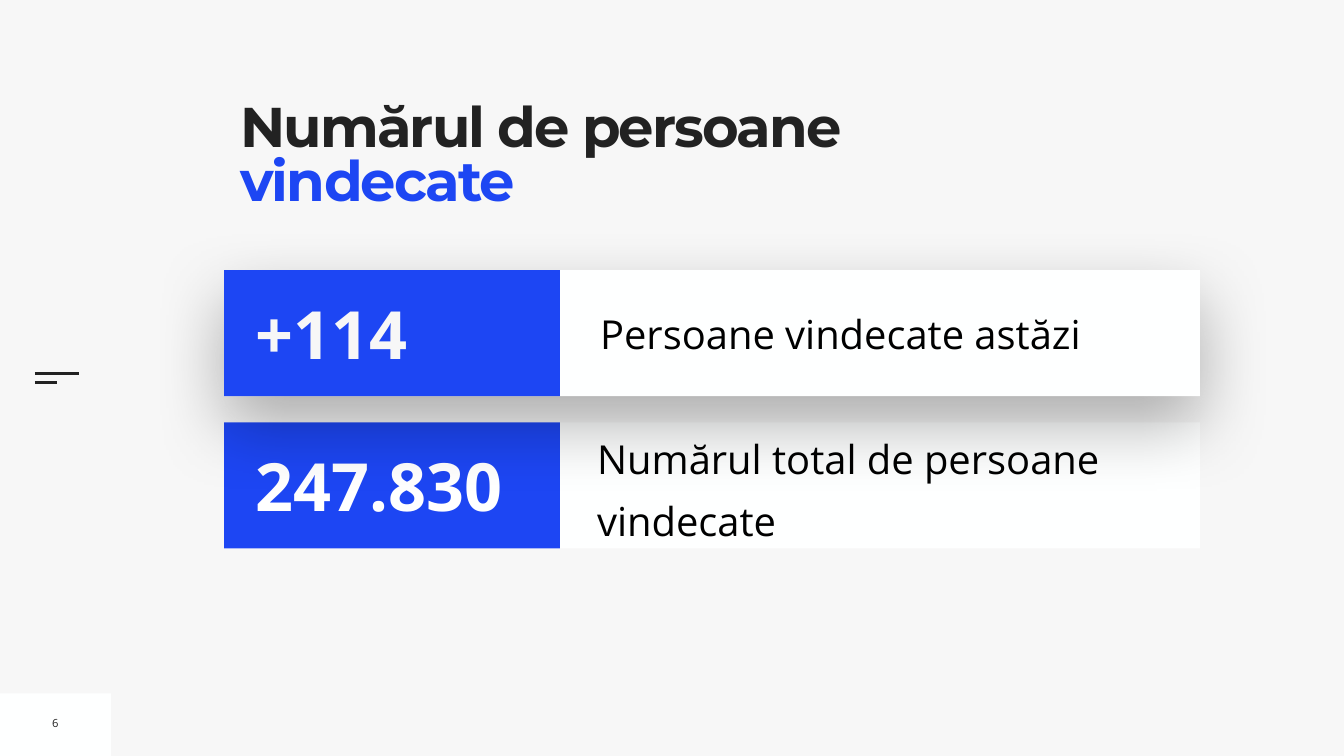
from lxml import etree
from pptx import Presentation, util as u
from pptx.dml.color import RGBColor
from pptx.enum import shapes, text
from pptx.oxml import ns

PAPER = RGBColor(0xF7, 0xF7, 0xF7)
WHITE = RGBColor(0xFE, 0xFF, 0xFF)
BRIGHT = RGBColor(0xFF, 0xFF, 0xFF)
BLUE = RGBColor(0x1D, 0x46, 0xF3)
DARK = RGBColor(0x22, 0x22, 0x22)
BLACK = RGBColor(0, 0, 0)


def style(item, values):
    """Set every named attribute on an item."""
    for name, value in values.items():
        setattr(item, name, value)


def add_run(para, words, color, **font):
    """Add a coloured run to a paragraph."""
    run = para.add_run()
    run.text = words
    style(run.font, font)
    run.font.color.rgb = color
    return run


def add_rect(parent, box, color):
    """Add a plain rectangle without outline or shadow."""
    rect = parent.add_shape(shapes.MSO_SHAPE.RECTANGLE, *map(u.Inches, box))
    rect.shadow.inherit = False
    rect.fill.solid()
    rect.fill.fore_color.rgb = color
    rect.line.fill.background()
    return rect


def add_shadow(rect):
    """Give a rectangle a soft shadow falling downwards."""
    effects = rect._element.spPr.find(ns.qn("a:effectLst"))
    outer = etree.SubElement(effects, ns.qn("a:outerShdw"), blurRad=str(u.Pt(100)),
                             dist=str(u.Pt(40)), dir="5400000", rotWithShape="0")
    color = etree.SubElement(outer, ns.qn("a:srgbClr"), val="000000")
    etree.SubElement(color, ns.qn("a:alpha"), val="30000")


def add_text(parent, box, words, size, color, inset=0.1, bold=False, wrap=True, para=None):
    """Add a text box centred vertically."""
    frame = parent.add_textbox(*map(u.Inches, box)).text_frame
    style(frame, {"word_wrap": wrap, "vertical_anchor": text.MSO_ANCHOR.MIDDLE,
                  "auto_size": text.MSO_AUTO_SIZE.SHAPE_TO_FIT_TEXT})
    style(frame, {f"margin_{side}": u.Inches(inset)
                  for side in ("left", "top", "right", "bottom")})
    style(frame.paragraphs[0], para or {})
    add_run(frame.paragraphs[0], words, color, name="Open Sans", size=u.Pt(size), bold=bold)


def add_rule(parent, top, width):
    """Add a short horizontal rule at the left edge."""
    ends = map(u.Inches, (0.69, top, 0.69 + width, top))
    rule = parent.add_connector(shapes.MSO_CONNECTOR.STRAIGHT, *ends)
    rule.line.color.rgb = DARK
    rule.line.width = u.Pt(3)
    etree.SubElement(rule._element.spPr, ns.qn("a:effectLst"))


def add_title(slide):
    """Place and format the two-colour title."""
    title = slide.shapes.title
    style(title, dict(zip(("left", "top", "width", "height"),
                          map(u.Inches, (4.77, 2.07, 13.01, 2.73)))))
    title.fill.solid()
    title.fill.fore_color.rgb = PAPER
    frame = title.text_frame
    style(frame, {"margin_left": 0, "margin_top": 0, "margin_right": 0, "margin_bottom": 0,
                  "word_wrap": True, "auto_size": text.MSO_AUTO_SIZE.NONE,
                  "vertical_anchor": text.MSO_ANCHOR.TOP})
    para = frame.paragraphs[0]
    style(para, {"alignment": text.PP_ALIGN.LEFT, "line_spacing": 0.8})
    for words, color in (("Numărul de persoane ", DARK), ("vindecate", BLUE)):
        run = add_run(para, words, color, name="Montserrat", size=u.Pt(80), bold=True)
        run.font._element.set("spc", "-270")


def add_card(slide, top, count, color, label, box, shadow=False, **form):
    """Add a white card with a blue count and a label."""
    group = slide.shapes.add_group_shape().shapes
    panel = add_rect(group, (4.45, top, 19.36, 2.5), WHITE)
    if shadow:
        add_shadow(panel)
    add_text(group, box, label, 57, BLACK, **form)
    add_rect(group, (4.45, top, 6.66, 2.5), BLUE)
    add_text(group, (4.98, top + 0.35, 6.03, 1.8), count, 95, color, bold=True)


def main():
    """Build the slide and save it."""
    deck = Presentation()
    style(deck, {"slide_width": u.Inches(26.67), "slide_height": u.Inches(15)})
    slide = deck.slides.add_slide(deck.slide_layouts[5])
    slide.background.fill.solid()
    slide.background.fill.fore_color.rgb = PAPER
    add_rect(slide.shapes, (0, 13.76, 2.2, 1.24), WHITE)
    for top, width in ((7.41, 0.88), (7.59, 0.44)):
        add_rule(slide.shapes, top, width)
    add_title(slide)
    add_text(slide.shapes, (0.93, 14.09, 0.34, 0.51), "6", 16, DARK, wrap=False,
             para={"alignment": text.PP_ALIGN.CENTER})
    add_card(slide, 8.38, "247.830", BRIGHT, "Numărul total de persoane vindecate",
             (11.85, 8.39, 11.95, 2.36), inset=0,
             para={"line_spacing": 1.3, "space_before": u.Pt(20)})
    add_card(slide, 5.36, "+114", PAPER, "Persoane vindecate astăzi",
             (11.81, 6.03, 11.76, 1.16), shadow=True)
    deck.save("out.pptx")


if __name__ == "__main__":
    main()
